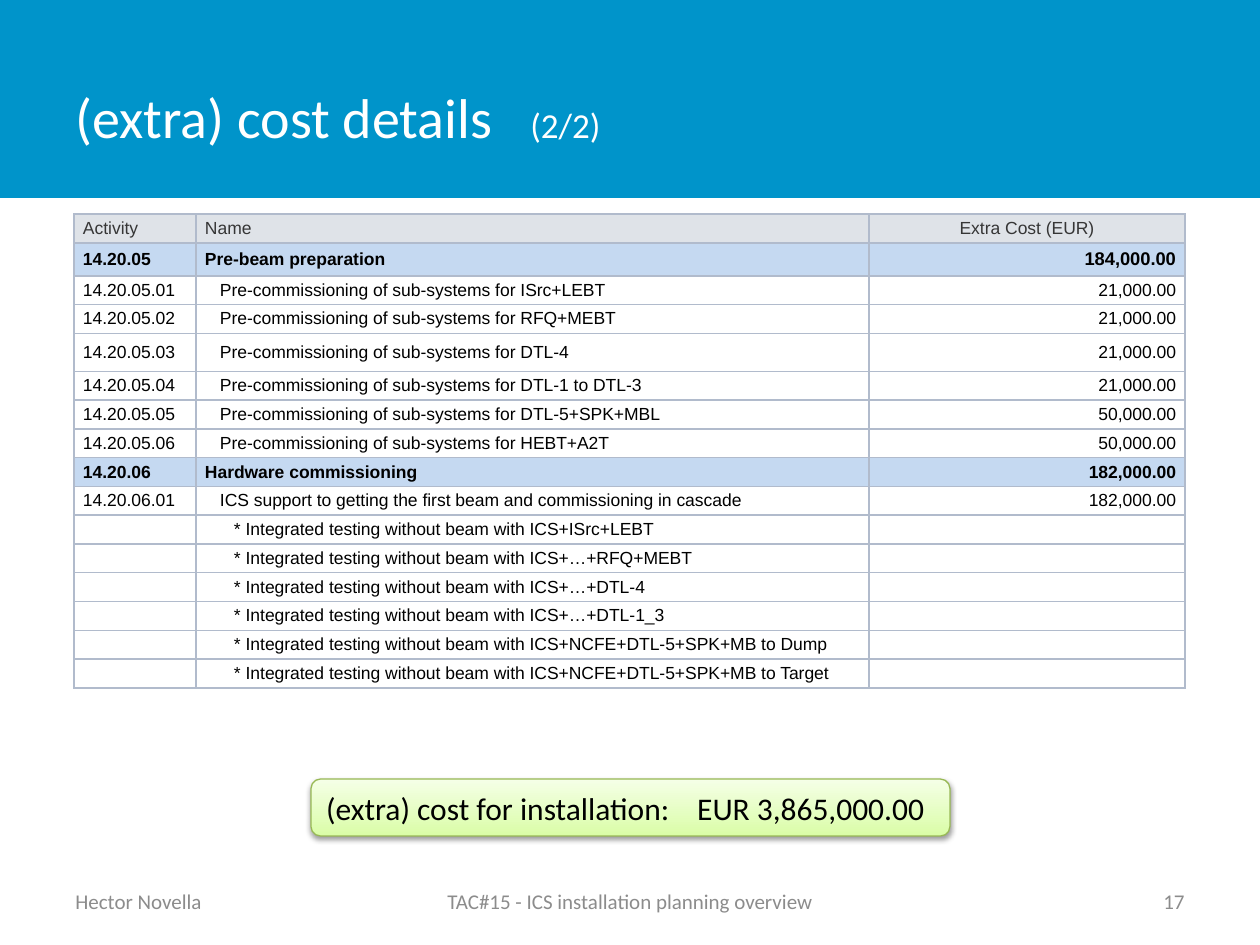
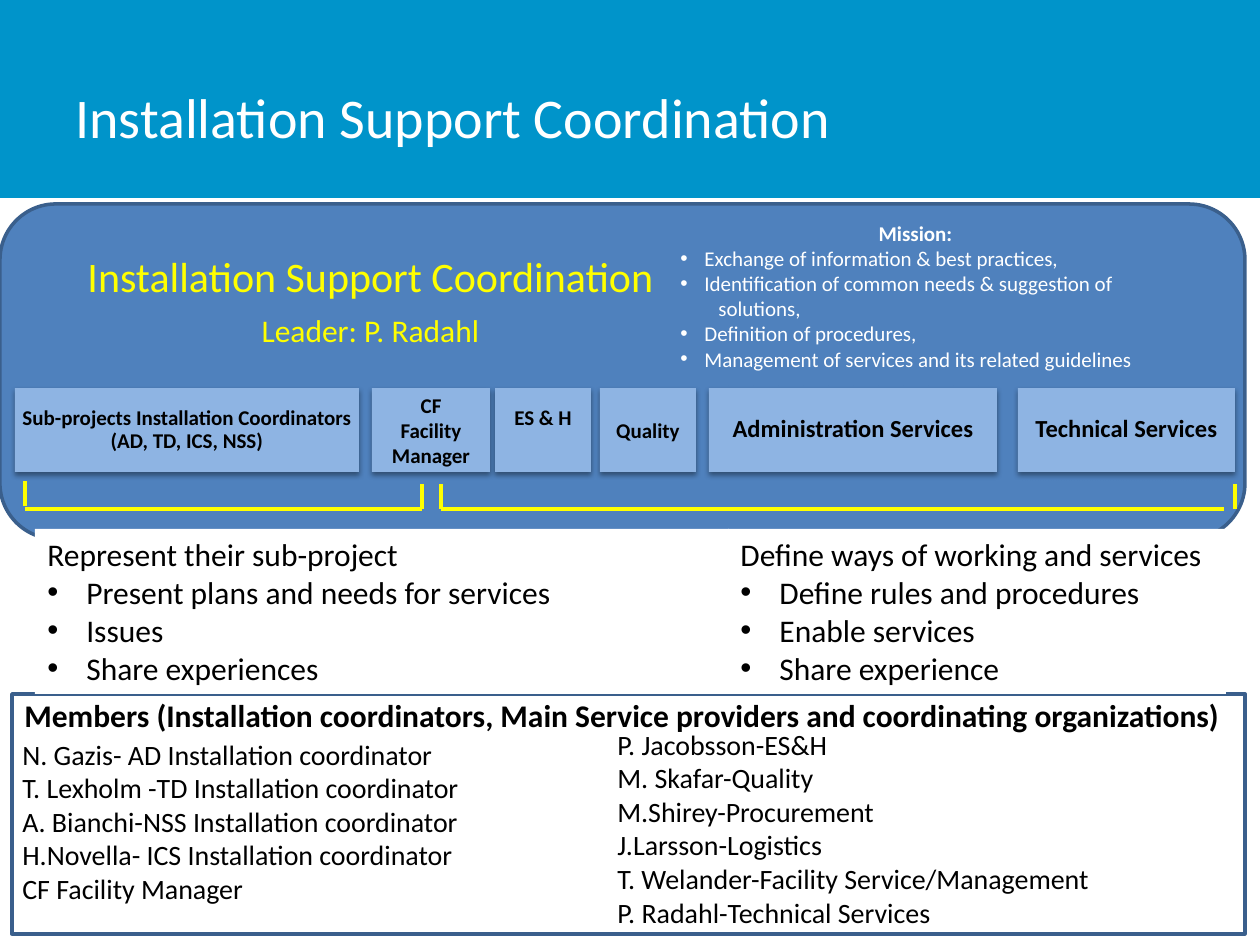
from pptx import Presentation
from pptx.dml.color import RGBColor
from pptx.enum.shapes import MSO_CONNECTOR, MSO_SHAPE
from pptx.enum.text import MSO_ANCHOR, PP_ALIGN
from pptx.oxml.xmlchemy import OxmlElement
from pptx.util import Emu, Pt

SCALE = 914400 / 126
BAND, WHITE, BLACK, GREY = "0094CA", "FFFFFF", "000000", "8C8C8C"
PANEL, PANEL_EDGE, SERVICE, YELLOW = "4F81BD", "3A5F8C", "8EB4E3", "FFFF00"
HEAD_FILL, GROUP_FILL, GRID = "DFE3E8", "C5D9F1", "B1BBCC"
LEFT, CENTER, RIGHT = PP_ALIGN.LEFT, PP_ALIGN.CENTER, PP_ALIGN.RIGHT

COST_ROWS = [
    ("Activity", "Name", "Extra Cost (EUR)"),
    ("14.20.05", "Pre-beam preparation", "184,000.00"),
    ("14.20.05.01", "Pre-commissioning of sub-systems for ISrc+LEBT", "21,000.00"),
    ("14.20.05.02", "Pre-commissioning of sub-systems for RFQ+MEBT", "21,000.00"),
    ("14.20.05.03", "Pre-commissioning of sub-systems for DTL-4", "21,000.00"),
    ("14.20.05.04", "Pre-commissioning of sub-systems for DTL-1 to DTL-3", "21,000.00"),
    ("14.20.05.05", "Pre-commissioning of sub-systems for DTL-5+SPK+MBL", "50,000.00"),
    ("14.20.05.06", "Pre-commissioning of sub-systems for HEBT+A2T", "50,000.00"),
    ("14.20.06", "Hardware commissioning", "182,000.00"),
    ("14.20.06.01", "ICS support to getting the first beam and commissioning in cascade",
     "182,000.00"),
] + [("", f"* Integrated testing without beam with ICS+{stage}", "") for stage in (
    "ISrc+LEBT", "…+RFQ+MEBT", "…+DTL-4", "…+DTL-1_3",
    "NCFE+DTL-5+SPK+MB to Dump", "NCFE+DTL-5+SPK+MB to Target")]
GROUP_ROWS = (1, 8)
TALL_ROWS = {1: 33, 4: 38}
TABLE_HEIGHT = 474


def px(length):
    """Turn pixels into EMU."""
    return Emu(round(length * SCALE))


def rgb(color):
    """Turn a hex string into a colour."""
    return RGBColor.from_string(color)


def add_child(parent, tag, **attributes):
    """Append an XML element with the given attributes."""
    child = OxmlElement(tag)
    for name, value in attributes.items():
        child.set(name, str(value))
    parent.append(child)
    return child


def add_para(frame, text, size, color=BLACK, bold=False, align=LEFT, font="Calibri",
             bullet=0, margin=0, tab=0):
    """Write one paragraph, reusing the empty first one of the frame."""
    para = frame.paragraphs[0]
    if para.runs:
        para = frame.add_paragraph()
    para.alignment = align
    properties = para._p.get_or_add_pPr()
    if bullet or margin:
        properties.set("marL", str(px(bullet or margin)))
        properties.set("indent", str(-px(bullet)))
    if bullet:
        add_child(properties, "a:buFont", typeface="Arial")
        add_child(properties, "a:buChar", char="•")
    if tab:
        stops = add_child(properties, "a:tabLst")
        add_child(stops, "a:tab", pos=px(tab), algn="l")
    para.font.name, para.font.size = font, Pt(size)
    para.font.bold, para.font.color.rgb = bold, rgb(color)
    if text:
        para.add_run().text = text
    else:
        para._p.get_or_add_endParaRPr().set("sz", str(size * 100))
    return para


def add_text(page, left, top, width, height, lines, size, color=BLACK, bold=False,
             align=LEFT, anchor=MSO_ANCHOR.TOP):
    """Add a text box with one paragraph for each line."""
    frame = page.shapes.add_textbox(px(left), px(top), px(width), px(height)).text_frame
    frame.word_wrap, frame.vertical_anchor = True, anchor
    for line in lines:
        add_para(frame, line, size, color, bold, align)
    return frame


def add_block(page, left, top, width, height, fill, edge=None, edge_width=2,
              kind=MSO_SHAPE.RECTANGLE):
    """Add a filled shape, with an outline if an edge colour is given."""
    block = page.shapes.add_shape(kind, px(left), px(top), px(width), px(height))
    block.shadow.inherit = False
    block.fill.solid()
    block.fill.fore_color.rgb = rgb(fill)
    if edge:
        block.line.color.rgb, block.line.width = rgb(edge), Pt(edge_width)
    else:
        block.line.fill.background()
    block.text_frame.word_wrap = True
    return block


def cast_shadow(block):
    """Give a shape a soft shadow below it."""
    effects = block._element.spPr.find("{*}effectLst")
    shadow = add_child(effects, "a:outerShdw", blurRad=Pt(3.1), dist=Pt(1.6),
                       dir=5400000, rotWithShape=0)
    add_child(add_child(shadow, "a:srgbClr", val=BLACK), "a:alpha", val=38000)


def add_page(deck, title, tab=0):
    """Add a blank slide with the title band and return it with its title paragraph."""
    page = deck.slides.add_slide(deck.slide_layouts[6])
    add_block(page, 0, 0, 1260, 198, BAND)
    frame = add_text(page, 63, 38, 984, 157, [], 32, anchor=MSO_ANCHOR.MIDDLE)
    return page, add_para(frame, title, 32, WHITE, tab=tab)


def add_footer(page, author, topic, number):
    """Add the author, topic and slide number at the foot."""
    for left, width, text, align in ((63, 294, author, LEFT), (430, 400, topic, CENTER),
                                     (903, 294, number, RIGHT)):
        add_text(page, left, 876, width, 50, [text], 12, GREY, align=align,
                 anchor=MSO_ANCHOR.MIDDLE)


def style_cell(cell, fill):
    """Set the borders, fill and margins of a table cell."""
    properties = cell._tc.get_or_add_tcPr()
    for side in ("a:lnL", "a:lnR", "a:lnT", "a:lnB"):
        line = add_child(properties, side, w=Pt(1))
        add_child(add_child(line, "a:solidFill"), "a:srgbClr", val=GRID)
    cell.fill.solid()
    cell.fill.fore_color.rgb = rgb(fill)
    cell.margin_left = cell.margin_right = px(9)
    cell.margin_top = cell.margin_bottom = 0
    cell.vertical_anchor = MSO_ANCHOR.MIDDLE


def add_cost_table(page):
    """Add the table of activities and their extra cost."""
    widths = (122, 673, 316)
    table = page.shapes.add_table(len(COST_ROWS), len(widths), px(74), px(214),
                                  px(sum(widths)), px(TABLE_HEIGHT)).table
    table.first_row = table.horz_banding = False
    for column, width in zip(table.columns, widths):
        column.width = px(width)
    plain_height = ((TABLE_HEIGHT - sum(TALL_ROWS.values()))
                    / (len(COST_ROWS) - len(TALL_ROWS)))
    for index, row in enumerate(COST_ROWS):
        table.rows[index].height = px(TALL_ROWS.get(index, plain_height))
        header, group = index == 0, index in GROUP_ROWS
        fill = HEAD_FILL if header else GROUP_FILL if group else WHITE
        name_margin = 0 if header or group else 15 if row[0] else 29
        aligns = (LEFT, LEFT, CENTER if header else RIGHT)
        for column, (text, align) in enumerate(zip(row, aligns)):
            cell = table.cell(index, column)
            style_cell(cell, fill)
            size = 10.5 if (index, column) == (1, 2) else 10
            add_para(cell.text_frame, text, size, "363636" if header else BLACK, group,
                     align, "Arial", margin=name_margin if column == 1 else 0)


def add_total(page):
    """Add the green box with the total cost."""
    total = add_block(page, 311, 779, 639, 57, WHITE, "98B955", 0.75,
                      MSO_SHAPE.ROUNDED_RECTANGLE)
    total.fill.gradient()
    total.fill.gradient_angle = 90
    for stop, color in zip(total.fill.gradient_stops, ("DAFDA7", "F5FFE7")):
        stop.color.rgb = rgb(color)
    total.fill.gradient_stops[0].position = 0
    total.fill.gradient_stops[1].position = 1
    cast_shadow(total)
    total.text_frame.margin_right = 0
    total.text_frame.vertical_anchor = MSO_ANCHOR.MIDDLE
    add_para(total.text_frame, "(extra) cost for installation:\tEUR 3,865,000.00", 18, tab=371)


def add_service(page, left, width, lines, size, spacing=1.0, lift=0):
    """Add one box in the row of services."""
    service = add_block(page, left, 388, width, 84, SERVICE)
    cast_shadow(service)
    frame = service.text_frame
    frame.vertical_anchor = MSO_ANCHOR.MIDDLE
    frame.margin_left = frame.margin_right = frame.margin_top = px(1)
    frame.margin_bottom = px(1 + lift)
    for line in lines:
        add_para(frame, line, size, bold=True, align=CENTER).line_spacing = spacing


def add_role(page, left, width, heading, duties):
    """Add a white box with a heading and bulleted duties."""
    frame = add_block(page, left, 529, width, 165, WHITE).text_frame
    frame.vertical_anchor = MSO_ANCHOR.TOP
    add_para(frame, heading, 18)
    for duty in duties:
        add_para(frame, duty, 18, bullet=39)


def add_mission(page):
    """Add the mission statement with its bullets."""
    frame = add_text(page, 668, 214, 495, 165, ["Mission:"], 12, WHITE, True, CENTER)
    for text in ("Exchange of information & best practices,",
                 "Identification of common needs & suggestion of", "solutions,",
                 "Definition of procedures,",
                 "Management of services and its related guidelines"):
        wrapped = text == "solutions,"
        add_para(frame, text, 12, WHITE, bullet=0 if wrapped else 24,
                 margin=38 if wrapped else 0)


def add_line(page, start_x, start_y, end_x, end_y):
    """Add a yellow bracket line."""
    line = page.shapes.add_connector(MSO_CONNECTOR.STRAIGHT, px(start_x), px(start_y),
                                     px(end_x), px(end_y))
    line.line.color.rgb, line.line.width = rgb(YELLOW), Pt(2.25)
    add_child(line._element.spPr, "a:effectLst")


def build_cost_page(deck):
    """Build the slide of cost details."""
    page, title = add_page(deck, "(extra) cost details\t", tab=455)
    span = title.add_run()
    span.text, span.font.size = "(2/2)", Pt(20)
    add_footer(page, "Hector Novella", "TAC#15 - ICS installation planning overview", "17")
    add_cost_table(page)
    add_total(page)


def build_coordination_page(deck):
    """Build the slide of installation support coordination."""
    page, _ = add_page(deck, "Installation Support Coordination")
    add_block(page, 12, 694, 1233, 240, WHITE, PANEL_EDGE)
    add_block(page, 0, 204, 1245, 335, PANEL, PANEL_EDGE, kind=MSO_SHAPE.ROUNDED_RECTANGLE)
    heading = add_text(page, 72, 244, 597, 112, ["Installation Support Coordination"], 24,
                       YELLOW, align=CENTER)
    add_para(heading, "Leader: P. Radahl", 18, YELLOW, align=CENTER)
    heading.paragraphs[0].space_after = Pt(6)
    add_mission(page)
    add_service(page, 15, 344, ["Sub-projects Installation Coordinators (AD, TD, ICS, NSS)"],
                12, 0.9)
    add_service(page, 372, 118, ["CF", "Facility", "Manager"], 12)
    add_service(page, 495, 96, ["ES & H"], 12, lift=25)
    add_service(page, 600, 96, ["Quality"], 12)
    add_service(page, 709, 288, ["Administration Services"], 14, 0.9)
    add_service(page, 1018, 217, ["Technical Services"], 14, 0.9)
    add_role(page, 35, 694, "Represent their sub-project",
             ["Present plans and needs for services", "Issues", "Share experiences"])
    add_role(page, 728, 498, "Define ways of working and services",
             ["Define rules and procedures", "Enable services", "Share experience"])
    for left, right in ((25, 422), (441, 1224)):
        add_line(page, left, 509, right, 509)
    for x, bottom in ((25, 506), (422, 509), (441, 509), (1235, 509)):
        add_line(page, x, bottom, x, bottom - 25)
    add_text(page, 10, 731, 630, 183, [
        "N. Gazis- AD Installation coordinator", "T. Lexholm -TD Installation coordinator",
        "A. Bianchi-NSS Installation coordinator", "H.Novella- ICS Installation coordinator",
        "CF Facility Manager"], 16)
    add_text(page, 605, 721, 630, 217, [
        "P. Jacobsson-ES&H", "M. Skafar-Quality", "M.Shirey-Procurement",
        "J.Larsson-Logistics", "T. Welander-Facility Service/Management",
        "P. Radahl-Technical Services"], 16)
    add_text(page, 12, 690, 1230, 50, ["Members (Installation coordinators, Main Service "
             "providers and coordinating organizations)"], 18, bold=True)


def main():
    """Build and save the deck."""
    deck = Presentation()
    deck.slide_width, deck.slide_height = px(1260), px(945)
    build_cost_page(deck)
    build_coordination_page(deck)
    deck.save("out.pptx")


if __name__ == "__main__":
    main()
